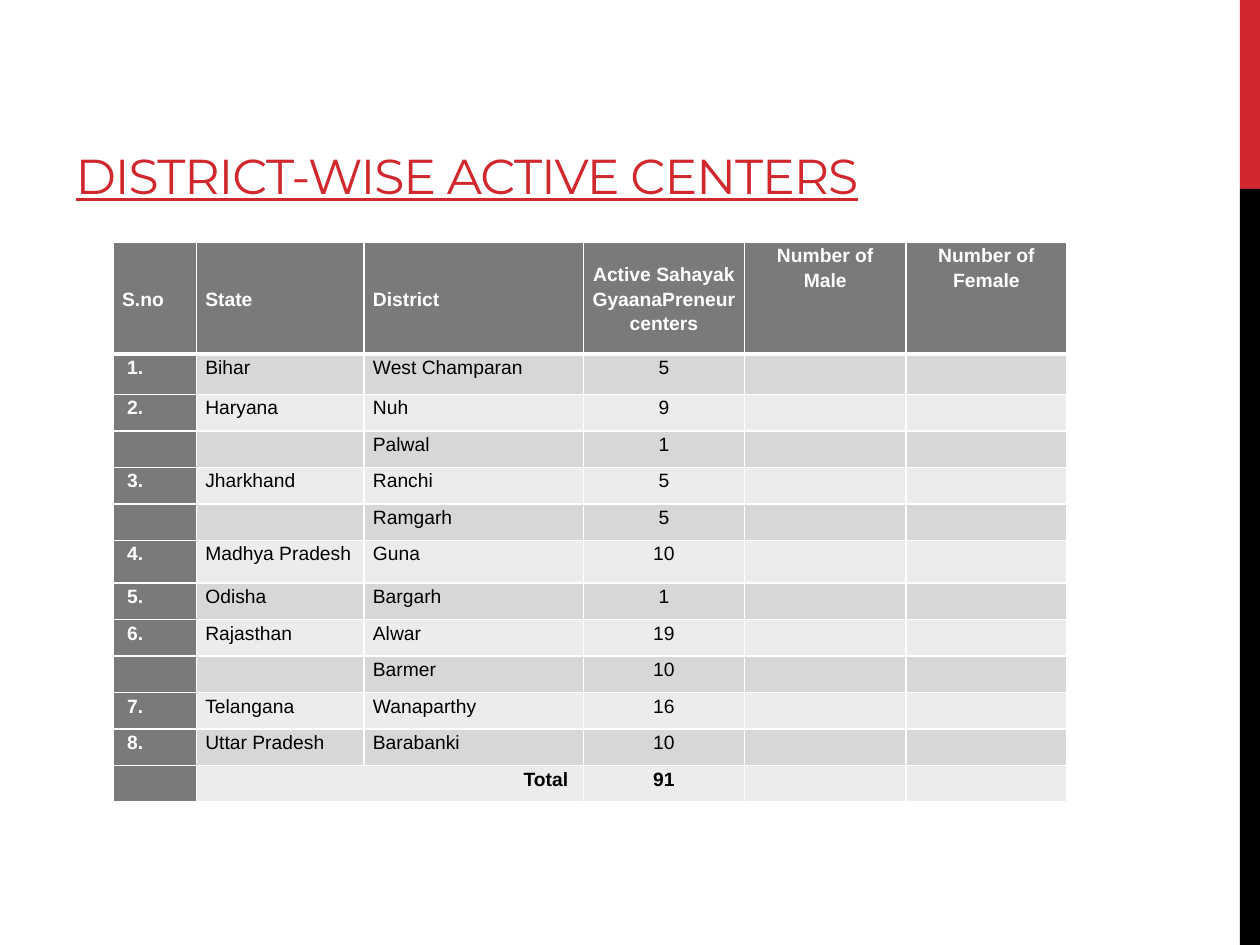
"""Build the slide that tables the active centers by district."""
from lxml.etree import SubElement
from pptx import Presentation
from pptx.dml.color import RGBColor
from pptx.enum.shapes import MSO_SHAPE
from pptx.enum.text import MSO_ANCHOR as Anchor, PP_ALIGN as Align
from pptx.oxml.ns import qn
from pptx.util import Inches, Pt

RED = RGBColor(0xD1, 0x28, 0x2E)
BLACK = RGBColor(0, 0, 0)
WHITE = RGBColor(0xFF, 0xFF, 0xFF)
DARK = RGBColor(0x7A, 0x7A, 0x7A)
BANDS = [RGBColor(0xEC, 0xEC, 0xEC), RGBColor(0xD7, 0xD7, 0xD7)]

TITLE = "DISTRICT-WISE ACTIVE CENTERS"
HEADER = ("S.no", "State", "District", "Active Sahayak GyaanaPreneur centers",
          "Number of Male", "Number of Female")
CENTERS = [
    ("Bihar", [("West Champaran", 5)]),
    ("Haryana", [("Nuh", 9), ("Palwal", 1)]),
    ("Jharkhand", [("Ranchi", 5), ("Ramgarh", 5)]),
    ("Madhya Pradesh", [("Guna", 10)]),
    ("Odisha", [("Bargarh", 1)]),
    ("Rajasthan", [("Alwar", 19), ("Barmer", 10)]),
    ("Telangana", [("Wanaparthy", 16)]),
    ("Uttar Pradesh", [("Barabanki", 10)]),
]
COLUMN_WIDTHS = [0.66, 1.33, 1.74, 1.28, 1.28, 1.28]
ROW_HEIGHT = 0.29
SPECIAL_HEIGHTS = {0: 0.89, 1: 0.32, 6: 0.34}
ALIGNMENTS = [Align.LEFT] * 3 + [Align.CENTER] * 3
WIDTH, HEIGHT = 10, 7.5
BAR_WIDTH = 0.16


def table_rows():
    """Return the header, one row per district and the total row."""
    rows = [HEADER]
    for number, (state, districts) in enumerate(CENTERS, 1):
        for index, (district, count) in enumerate(districts):
            first = (f"{number}.", state) if index == 0 else ("", "")
            rows.append((*first, district, str(count), "", ""))
    total = sum(count for _, districts in CENTERS for _, count in districts)
    return rows + [("", "Total", "", str(total), "", "")]


def add_bar(slide, top, height, color):
    """Add one part of the bar at the right edge."""
    bar = slide.shapes.add_shape(
        MSO_SHAPE.RECTANGLE, Inches(WIDTH - BAR_WIDTH), Inches(top),
        Inches(BAR_WIDTH), Inches(height))
    bar.shadow.inherit = False
    bar.fill.solid()
    bar.fill.fore_color.rgb = color
    bar.line.fill.background()


def add_title(slide):
    """Place and format the title."""
    title = slide.shapes.title
    title.left, title.top = Inches(0.5), Inches(0.17)
    title.width, title.height = Inches(9.07), Inches(1.5)
    title.text_frame.vertical_anchor = Anchor.BOTTOM
    paragraph = title.text_frame.paragraphs[0]
    paragraph.alignment = Align.LEFT
    run = paragraph.add_run()
    run.text = TITLE
    run.font.name, run.font.size = "Montserrat", Pt(28)
    run.font.underline = True
    run.font.color.rgb = RED
    run.font._element.set("spc", "-60")


def set_borders(cell, widths):
    """Give the left, right, top and bottom sides white lines."""
    properties = cell._tc.get_or_add_tcPr()
    for side, width in zip("LRTB", widths):
        line = SubElement(properties, qn(f"a:ln{side}"), w=str(Pt(width)))
        fill = SubElement(line, qn("a:solidFill"))
        SubElement(fill, qn("a:srgbClr"), val=str(WHITE))


def format_cell(cell, text, row, column, is_total):
    """Write one cell and style it by its place in the table."""
    is_header, is_dark = row == 0, row == 0 or column == 0
    set_borders(cell, (1, 1, 3 if row == 1 else 1, 3 if is_header else 1))
    cell.fill.solid()
    cell.fill.fore_color.rgb = DARK if is_dark else BANDS[row % 2]
    cell.margin_left = Inches(0.11 if column == 0 and not is_header else 0.07)
    cell.margin_right = Inches(0.12 if text == "Total" else 0.07)
    cell.margin_top = cell.margin_bottom = 0
    cell.vertical_anchor = Anchor.MIDDLE if is_header and column < 4 else Anchor.TOP
    cell.text = text
    paragraph = cell.text_frame.paragraphs[0]
    paragraph.alignment = Align.RIGHT if text == "Total" else ALIGNMENTS[column]
    paragraph.line_spacing = 1.15
    paragraph.font.name, paragraph.font.size = "Arial", Pt(11)
    paragraph.font.bold = is_dark or is_total
    paragraph.font.color.rgb = WHITE if is_dark else BLACK
    if not text:
        paragraph._p.get_or_add_endParaRPr().set("sz", "1100")


def add_centers_table(slide):
    """Add the table of centers."""
    rows = table_rows()
    heights = [SPECIAL_HEIGHTS.get(row, ROW_HEIGHT) for row in range(len(rows))]
    table = slide.shapes.add_table(
        len(rows), len(HEADER), Inches(0.9), Inches(1.92),
        Inches(sum(COLUMN_WIDTHS)), Inches(sum(heights))).table
    for column, width in zip(table.columns, COLUMN_WIDTHS):
        column.width = Inches(width)
    last = len(rows) - 1
    for row, texts in enumerate(rows):
        table.rows[row].height = Inches(heights[row])
        for column, text in enumerate(texts):
            format_cell(table.cell(row, column), text, row, column, row == last)
    table.cell(last, 1).merge(table.cell(last, 2))


def main():
    """Build and save the presentation."""
    presentation = Presentation()
    presentation.slide_width, presentation.slide_height = Inches(WIDTH), Inches(HEIGHT)
    slide = presentation.slides.add_slide(presentation.slide_layouts[5])
    add_bar(slide, 0, HEIGHT / 5, RED)
    add_bar(slide, HEIGHT / 5, HEIGHT * 4 / 5, BLACK)
    add_title(slide)
    add_centers_table(slide)
    presentation.save("out.pptx")


if __name__ == "__main__":
    main()
